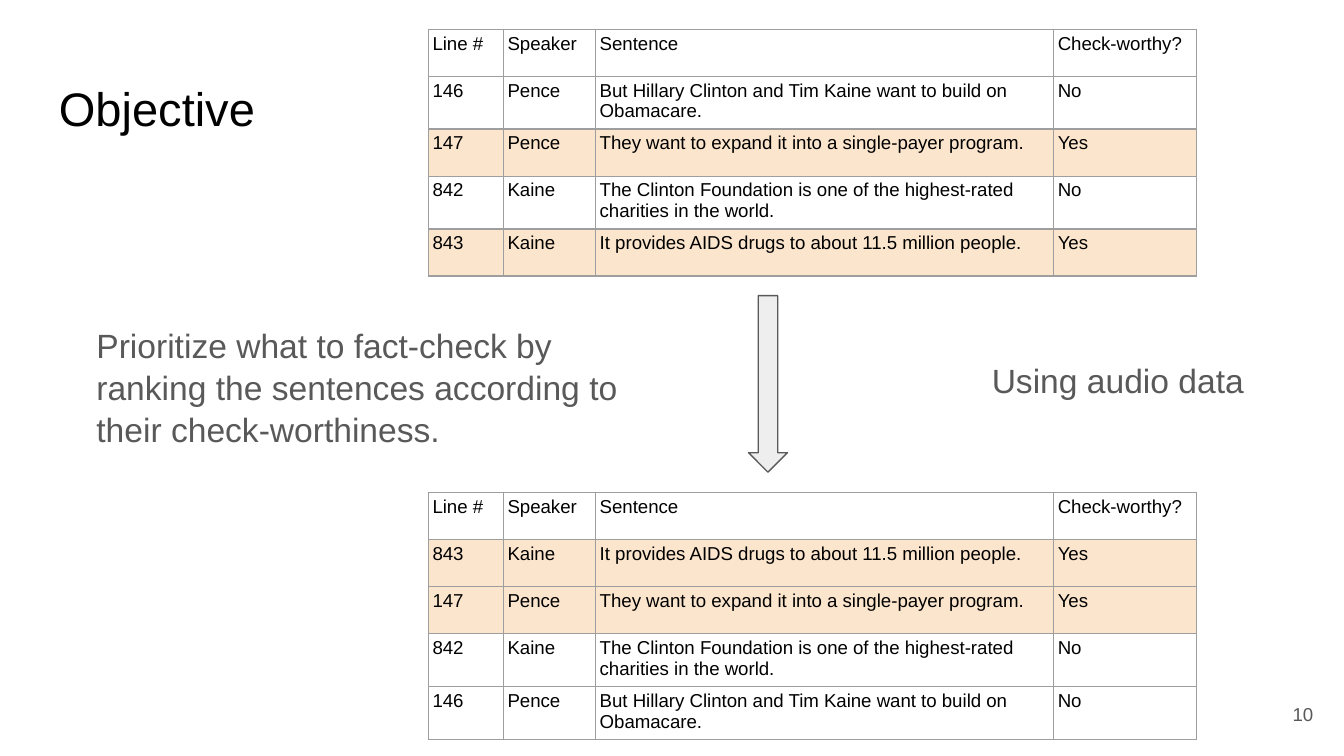
"""Build the Objective slide: sentences before and after ranking by check-worthiness."""
import pptx
import pptx.util
import pptx.dml.color
import pptx.enum.shapes
import pptx.enum.text
import pptx.oxml
from dataclasses import dataclass

Pt = pptx.util.Pt
ALIGN = pptx.enum.text.PP_ALIGN
ANCHOR = pptx.enum.text.MSO_ANCHOR


@dataclass(frozen=True)
class Theme:
    font: str = "Arial"
    black: str = "000000"
    gray: str = "595959"
    border: str = "9E9E9E"
    highlight: str = "FCE5CD"
    arrow: str = "EEEEEE"
    title: float = 25.2
    body: float = 18
    small: float = 10
    line: float = 0.75


THEME = Theme()
HEADER = ("Line #", "Speaker", "Sentence", "Check-worthy?")
SENTENCES = {
    "146": ("Pence", "But Hillary Clinton and Tim Kaine want to build on Obamacare.", "No"),
    "147": ("Pence", "They want to expand it into a single-payer program.", "Yes"),
    "842": ("Kaine", "The Clinton Foundation is one of the highest-rated charities in the world.", "No"),
    "843": ("Kaine", "It provides AIDS drugs to about 11.5 million people.", "Yes"),
}
TABLES = [
    (15.7, ("146", "147", "842", "843"), (25.2, 26.5, 25.2, 26.5, 25.2)),
    (263.9, ("843", "147", "842", "146"), (25.2, 25.2, 25.2, 28.4, 28.4)),
]
TABLE_LEFT = 229.6
COLUMNS = (40.2, 49.4, 245.4, 76.4)
INSET = 2.1
TEXTS = [
    ("Objective", (24.5, 35.3, 671, 45.4), THEME.title, THEME.black, ALIGN.LEFT, ANCHOR.TOP, 1),
    ("Prioritize what to fact-check by ranking the sentences according to their check-worthiness.",
     (44.6, 165.6, 304.6, 79.9), THEME.body, THEME.gray, ALIGN.LEFT, ANCHOR.TOP, 1.05),
    ("Using audio data", (524.2, 184.3, 183.6, 36), THEME.body, THEME.gray, ALIGN.LEFT, ANCHOR.TOP, 1.05),
    ("10", (667.4, 367.2, 43.2, 31), THEME.small, THEME.gray, ALIGN.RIGHT, ANCHOR.MIDDLE, 1),
]
ARROW = (401, 158.4, 20.9, 94.6)


def rgb(value):
    return pptx.dml.color.RGBColor.from_string(value)


def add_run(p, text, size, color):
    r = p.add_run()
    r.text = text
    r.font.name, r.font.size = THEME.font, Pt(size)
    r.font.color.rgb = rgb(color)


def add_text(s, text, box, size, color, align, anchor, spacing):
    tf = s.shapes.add_textbox(*map(Pt, box)).text_frame
    tf.word_wrap = True
    tf.vertical_anchor = anchor
    tf.margin_left = tf.margin_right = tf.margin_top = tf.margin_bottom = Pt(7.2)
    p = tf.paragraphs[0]
    p.alignment, p.line_spacing = align, spacing
    add_run(p, text, size, color)


def add_borders(cell):
    props = cell._tc.get_or_add_tcPr()
    for i, side in enumerate(("lnL", "lnR", "lnT", "lnB")):
        props.insert(i, pptx.oxml.parse_xml(
            f'<a:{side} xmlns:a="http://schemas.openxmlformats.org/drawingml/2006/main" '
            f'w="{Pt(THEME.line)}"><a:solidFill><a:srgbClr val="{THEME.border}"/>'
            f'</a:solidFill></a:{side}>'))


def add_sentences(s, top, order, heights):
    rows = [HEADER] + [(line, *SENTENCES[line]) for line in order]
    table = s.shapes.add_table(len(rows), len(COLUMNS), Pt(TABLE_LEFT), Pt(top),
                               Pt(sum(COLUMNS)), Pt(sum(heights))).table
    table.first_row = table.horz_banding = False
    for column, width in zip(table.columns, COLUMNS):
        column.width = Pt(width)
    for row, height, values in zip(table.rows, heights, rows):
        row.height = Pt(height)
        for cell, value in zip(row.cells, values):
            cell.margin_left = cell.margin_right = Pt(INSET)
            cell.margin_top = cell.margin_bottom = Pt(INSET)
            if values[-1] == "Yes":
                cell.fill.solid()
                cell.fill.fore_color.rgb = rgb(THEME.highlight)
            else:
                cell.fill.background()
            add_borders(cell)
            add_run(cell.text_frame.paragraphs[0], value, THEME.small, THEME.black)


def add_arrow(s):
    sp = s.shapes.add_shape(pptx.enum.shapes.MSO_SHAPE.DOWN_ARROW, *map(Pt, ARROW))
    sp.shadow.inherit = False
    sp.fill.solid()
    sp.fill.fore_color.rgb = rgb(THEME.arrow)
    sp.line.color.rgb = rgb(THEME.gray)
    sp.line.width = Pt(THEME.line)


def main():
    prs = pptx.Presentation()
    prs.slide_width, prs.slide_height = Pt(720), Pt(405)
    s = prs.slides.add_slide(prs.slide_layouts[6])
    for text in TEXTS:
        add_text(s, *text)
    for table in TABLES:
        add_sentences(s, *table)
    add_arrow(s)
    prs.save("out.pptx")


if __name__ == "__main__":
    main()
